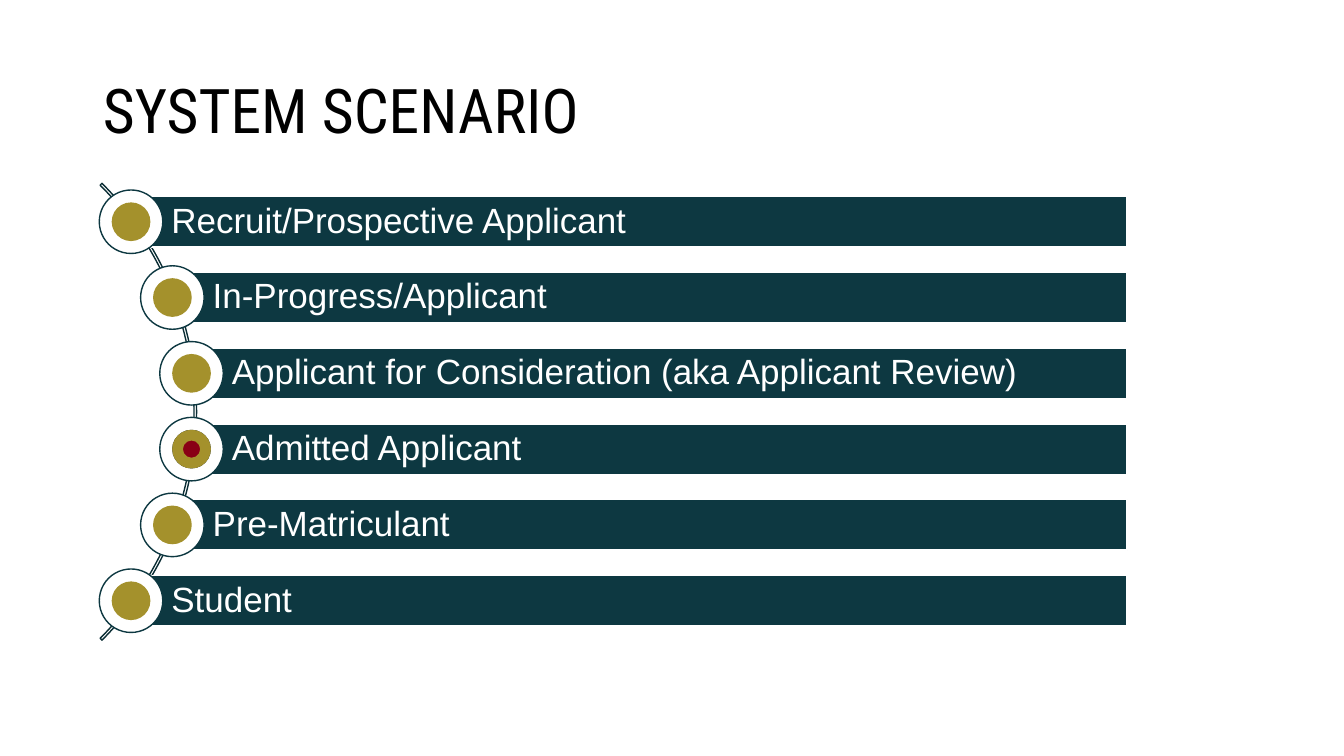
from dataclasses import dataclass

from pptx import Presentation
from pptx.dml.color import RGBColor
from pptx.enum.shapes import MSO_SHAPE
from pptx.enum.text import MSO_ANCHOR, PP_ALIGN
from pptx.util import Pt

PX = 9144  # EMU, 100 px to the inch
ARC, BAR, CIRCLE, DONUT = (MSO_SHAPE.BLOCK_ARC, MSO_SHAPE.RECTANGLE,
                           MSO_SHAPE.OVAL, MSO_SHAPE.DONUT)
MIDDLE, LEFT = MSO_ANCHOR.MIDDLE, PP_ALIGN.LEFT


@dataclass(frozen=True)
class Theme:
    teal: str = "0D3841"
    arc_line: str = "0A2D34"
    dark: str = "06191C"
    gold: str = "A4912C"
    red: str = "890015"
    white: str = "FFFFFF"
    black: str = "000000"
    title_font: str = "Roboto Condensed"
    body_font: str = "Arial"
    title_size: int = 44
    body_size: int = 25


THEME = Theme()
STAGES = [  # label, indent of the bar along the arc
    ("Recruit/Prospective Applicant", 0),
    ("In-Progress/Applicant", 41),
    ("Applicant for Consideration (aka Applicant Review)", 60),
    ("Admitted Applicant", 60),
    ("Pre-Matriculant", 41),
    ("Student", 0),
]
CURRENT_STAGE = "Admitted Applicant"
BAR_HEIGHT, RING_SIZE, DOT_SIZE = 50, 63, 37


def write_text(shape, text, *, font, size, color, insets):
    frame = shape.text_frame
    frame.word_wrap = True
    frame.vertical_anchor = MIDDLE
    (frame.margin_left, frame.margin_top,
     frame.margin_right, frame.margin_bottom) = [inset * PX for inset in insets]
    para = frame.paragraphs[0]
    para.alignment = LEFT
    para.line_spacing = 0.9
    span = para.add_run()
    span.text = text
    span.font.name = font
    span.font.size = Pt(size)
    span.font.color.rgb = RGBColor.from_string(color)


def add_figure(page, kind, box, *, fill=None, line):
    shape = page.shapes.add_shape(kind, *[round(length * PX) for length in box])
    shape.shadow.inherit = False
    if fill:
        shape.fill.solid()
        shape.fill.fore_color.rgb = RGBColor.from_string(fill)
    else:
        shape.fill.background()
    shape.line.color.rgb = RGBColor.from_string(line)
    shape.line.width = Pt(1)
    return shape


def add_disc(page, center, size, *, kind=CIRCLE, fill, line):
    """Place a round shape by its centre."""
    x, y = center
    return add_figure(page, kind, (x - size / 2, y - size / 2, size, size),
                      fill=fill, line=line)


def place_title(page, box, text):
    title = page.shapes.title
    title.left, title.top, title.width, title.height = [n * PX for n in box]
    write_text(title, text, font=THEME.title_font, size=THEME.title_size,
               color=THEME.black, insets=(10, 5, 10, 5))


def add_arc(page, box):
    arc = add_figure(page, ARC, box, line=THEME.arc_line)
    for index, value in enumerate((189, 27, 0.004)):
        arc.adjustments[index] = value


def add_stage(page, box, label):
    left, top, width, height = box
    bar = add_figure(page, BAR, box, fill=THEME.teal, line=THEME.white)
    write_text(bar, label, font=THEME.body_font, size=THEME.body_size,
               color=THEME.white, insets=(40, 7, 7, 7))
    center = (left, top + height / 2)
    add_disc(page, center, RING_SIZE, fill=THEME.white, line=THEME.teal)
    if label == CURRENT_STAGE:
        add_disc(page, center, DOT_SIZE, fill=THEME.red, line=THEME.dark)
        add_disc(page, center, DOT_SIZE, kind=DONUT, fill=THEME.gold, line=THEME.gold)
    else:
        add_disc(page, center, DOT_SIZE, fill=THEME.gold, line=THEME.gold)


def add_stages(page, box):
    """Spread the bars evenly over the box, each indented to follow the arc."""
    left, top, width, height = box
    pitch = (height - BAR_HEIGHT) / (len(STAGES) - 1)
    for row, (label, indent) in enumerate(STAGES):
        add_stage(page, (left + indent, top + row * pitch,
                         width - indent, BAR_HEIGHT), label)


def main():
    deck = Presentation()
    deck.slide_width, deck.slide_height = 1333 * PX, 750 * PX
    page = deck.slides.add_slide(deck.slide_layouts[5])
    place_title(page, (92, 40, 1150, 145), "SYSTEM SCENARIO")
    add_arc(page, (-446, 88, 641, 641))
    add_stages(page, (130, 195, 988, 426))
    deck.save("out.pptx")


if __name__ == "__main__":
    main()
